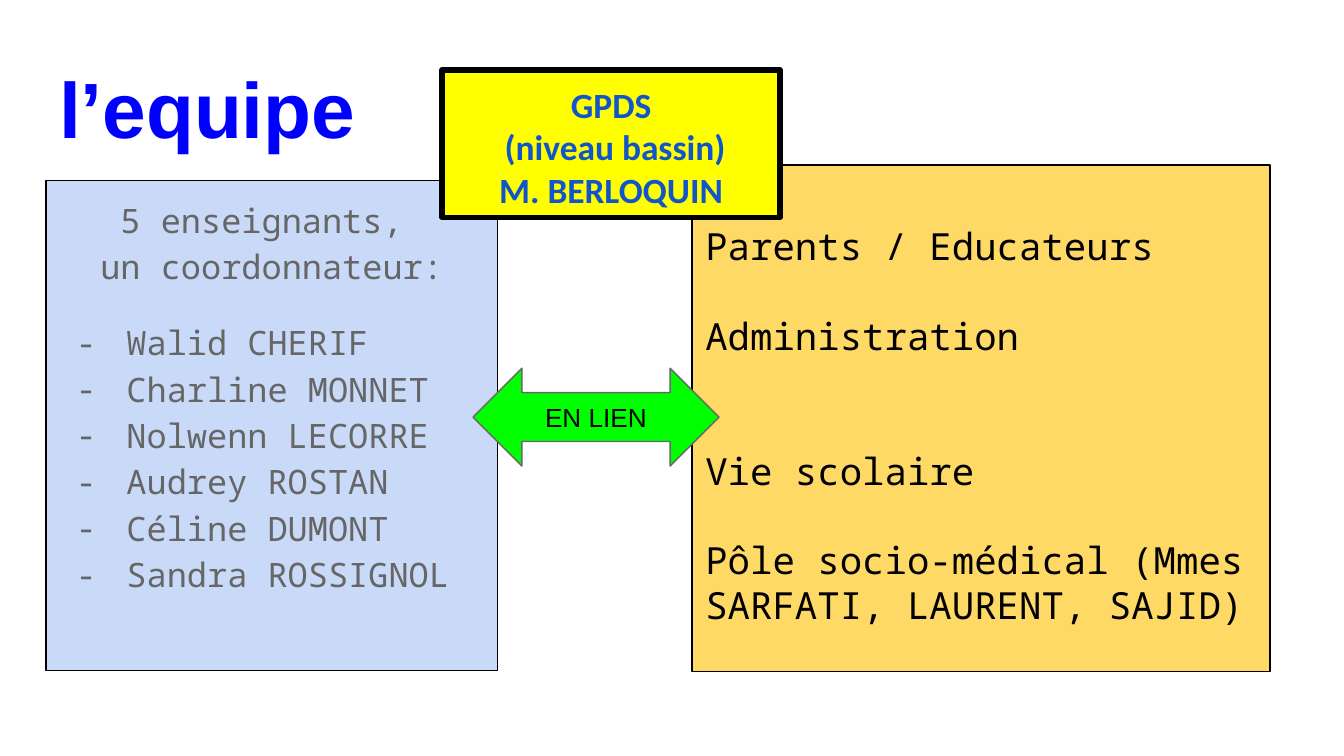
import pptx
import pptx.util
import pptx.dml.color
import pptx.enum.shapes
import pptx.enum.text
import pptx.oxml
import pptx.oxml.ns
import lxml.etree

Cm, Pt = pptx.util.Cm, pptx.util.Pt
Kind = pptx.enum.shapes.MSO_SHAPE
Anchor = pptx.enum.text.MSO_ANCHOR
Align = pptx.enum.text.PP_ALIGN

HEAD = "l’equipe"
STAFF = ["5 enseignants, ", "un coordonnateur:"]
NAMES = [
    "Walid CHERIF",
    "Charline MONNET",
    "Nolwenn LECORRE",
    "Audrey ROSTAN",
    "Céline DUMONT",
    "Sandra ROSSIGNOL",
]
LINKS = [
    ("Parents / Educateurs", 0),
    ("Administration", 1),
    ("Vie scolaire", 2),
    ("Pôle socio-médical (Mmes SARFATI, LAURENT, SAJID)", 1),
]
GROUP = ["GPDS", " (niveau bassin)", "M. BERLOQUIN"]
ARROW = "EN LIEN"

THEME = {
    "title": ("Arial", 42, "0000FF", True),
    "staff": ("Noto Sans Mono", 18, "666666", False),
    "links": ("Noto Sans Mono", 20, "000000", False),
    "arrow": ("Arial", 14, "000000", False),
    "group": ("Calibri", 19, "1155CC", True),
    "blue": "C9DAF8",
    "gold": "FFD966",
    "green": "00FF00",
    "yellow": "FFFF00",
    "black": "000000",
    "grey": "666666",
}
PAD = 0.25
GAP = 24.1


def tint(name):
    return pptx.dml.color.RGBColor.from_string(name)


def place(shape, left, top, width, height):
    shape.left, shape.top = Cm(left), Cm(top)
    shape.width, shape.height = Cm(width), Cm(height)


def paint(shape, fill, line, weight):
    shape.fill.solid()
    shape.fill.fore_color.rgb = tint(THEME[fill])
    shape.line.color.rgb = tint(THEME[line])
    shape.line.width = Pt(weight)
    shape.shadow.inherit = False


def frame(shape, anchor=Anchor.TOP, top=PAD):
    text = shape.text_frame
    text.word_wrap = True
    text.auto_size = pptx.enum.text.MSO_AUTO_SIZE.NONE
    text.vertical_anchor = anchor
    text.margin_left = text.margin_right = text.margin_bottom = Cm(PAD)
    text.margin_top = Cm(top)
    return text


def write(text, lines, style, align=Align.LEFT, before=0, space=1.0):
    face, size, color, bold = THEME[style]
    first = text.paragraphs[0]
    para = text.add_paragraph() if first.runs else first
    para.alignment = align
    para.space_before = Pt(before)
    para.line_spacing = space
    for spot, line in enumerate(lines):
        if spot:
            para.add_line_break()
        run = para.add_run()
        run.text = line
        run.font.name, run.font.size, run.font.bold = face, Pt(size), bold
        run.font.color.rgb = tint(color)
    return para


def mark(para, sign, left, hang):
    props = para._p.get_or_add_pPr()
    props.set("marL", str(Cm(left)))
    props.set("indent", str(Cm(hang)))
    qn = pptx.oxml.ns.qn
    if not sign:
        lxml.etree.SubElement(props, qn("a:buNone"))
        return
    face, size, color, bold = THEME["staff"]
    hue = lxml.etree.SubElement(props, qn("a:buClr"))
    lxml.etree.SubElement(hue, qn("a:srgbClr")).set("val", color)
    lxml.etree.SubElement(props, qn("a:buFont")).set("typeface", face)
    lxml.etree.SubElement(props, qn("a:buChar")).set("char", sign)


def build():
    deck = pptx.Presentation()
    deck.slide_width, deck.slide_height = Cm(25.4), Cm(14.29)
    slide = deck.slides.add_slide(deck.slide_layouts[1])

    def shape(kind, box, fill, line, weight):
        item = slide.shapes.add_shape(kind, *map(Cm, box))
        paint(item, fill, line, weight)
        return item

    title = slide.shapes.title
    place(title, 0.87, 0.89, 23.67, 2.24)
    write(frame(title), [HEAD], "title")

    staff = slide.placeholders[1]
    place(staff, 0.87, 3.41, 8.53, 9.27)
    paint(staff, "blue", "black", 0.75)
    text = frame(staff)
    mark(write(text, STAFF, "staff", Align.CENTER, space=1.15), "", 0, 0)
    for spot, name in enumerate(NAMES):
        before = 0 if spot else 16
        para = write(text, [name], "staff", before=before, space=1.15)
        mark(para, "-", 1.27, -0.95)

    links = shape(Kind.RECTANGLE, (13.08, 3.12, 10.92, 9.58), "gold", "black", 0.75)
    text = frame(links, top=PAD + Pt(GAP).cm)
    for name, skip in LINKS:
        write(text, [name], "links", before=skip * GAP)

    arrow = shape(
        Kind.LEFT_RIGHT_ARROW, (8.94, 6.96, 4.65, 1.85), "green", "grey", 0.75
    )
    write(frame(arrow, Anchor.MIDDLE), [ARROW], "arrow", Align.CENTER)

    group = shape(Kind.RECTANGLE, (8.36, 1.32, 6.38, 2.79), "yellow", "black", 3)
    text = frame(group)
    for line in GROUP:
        write(text, [line], "group", Align.CENTER)

    deck.save("out.pptx")


if __name__ == "__main__":
    build()
